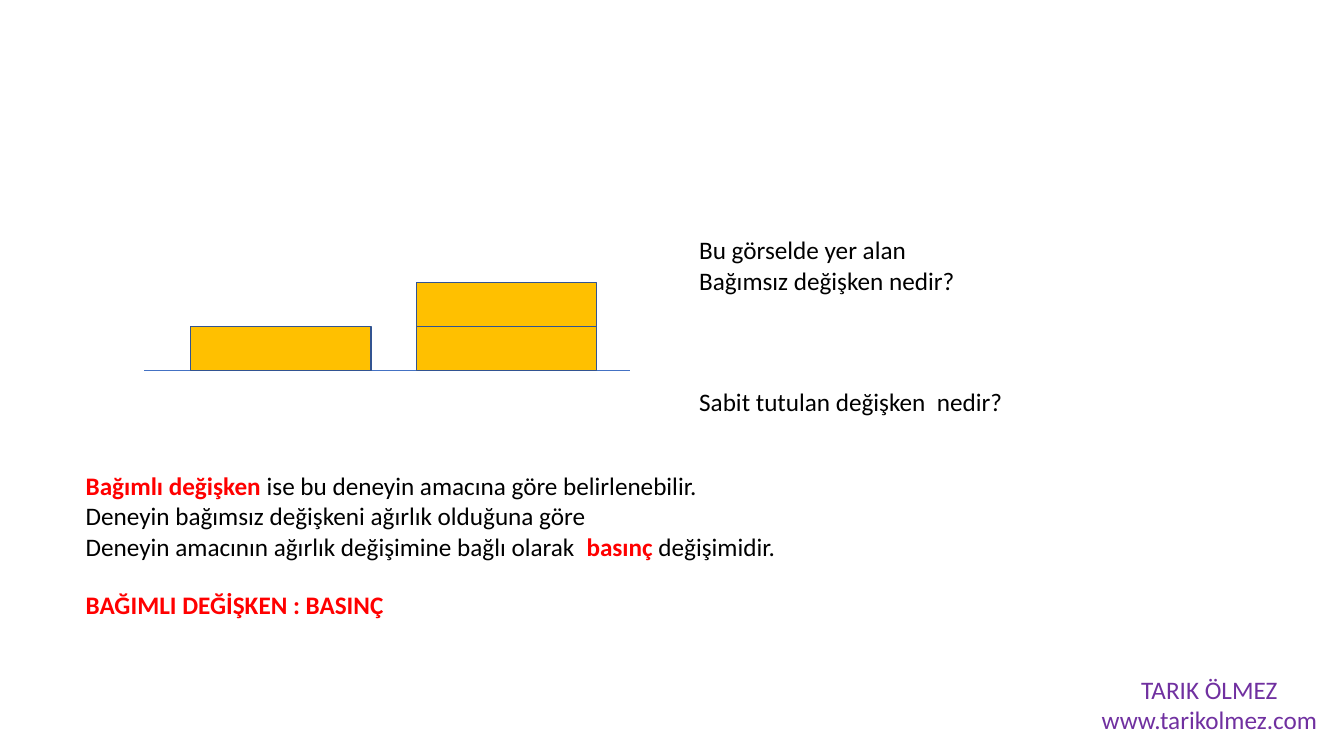
"""Builds a slide on the variables of a pressure experiment."""
from lxml.etree import SubElement
from pptx import Presentation
from pptx.dml.color import RGBColor
from pptx.enum.shapes import MSO_CONNECTOR as Connector, MSO_SHAPE as Shape
from pptx.enum.text import PP_ALIGN as Align
from pptx.oxml.ns import qn
from pptx.util import Cm, Pt

BLACK = RGBColor(0x00, 0x00, 0x00)
RED = RGBColor(0xFF, 0x00, 0x00)
PURPLE = RGBColor(0x70, 0x30, 0xA0)
AMBER = RGBColor(0xFF, 0xC0, 0x00)
BLUE = RGBColor(0x44, 0x72, 0xC4)
DARK_BLUE = RGBColor(0x32, 0x54, 0x91)

PLAIN = {"name": "Calibri", "size": Pt(18), "bold": False}
STRONG = PLAIN | {"bold": True}


def add_text(slide, box, paragraphs, align=Align.LEFT):
    """Adds a text box; each paragraph is a list of (text, format, colour)."""
    frame = slide.shapes.add_textbox(*map(Cm, box)).text_frame
    frame.word_wrap = True
    for index, runs in enumerate(paragraphs):
        paragraph = frame.add_paragraph() if index else frame.paragraphs[0]
        paragraph.alignment = align
        for text, values, colour in runs:
            run = paragraph.add_run()
            run.text = text
            run.font.color.rgb = colour
            for name, value in values.items():
                setattr(run.font, name, value)
    return frame


presentation = Presentation()
presentation.slide_width = Cm(33.87)
presentation.slide_height = Cm(19.05)
slide = presentation.slides.add_slide(presentation.slide_layouts[6])

questions = add_text(slide, (17.37, 5.79, 13.69, 4.88), [
    [("Bu görselde yer alan", PLAIN, BLACK)],
    [("Bağımsız değişken nedir?", PLAIN, BLACK)],
    [("Sabit tutulan değişken  nedir?", PLAIN, BLACK)],
])
questions.paragraphs[-1].space_before = Pt(65)

add_text(slide, (1.91, 11.73, 20.52, 2.57), [
    [("Bağımlı değişken ", STRONG, RED),
     ("ise bu deneyin amacına göre belirlenebilir.", PLAIN, BLACK)],
    [("Deneyin bağımsız değişkeni ağırlık olduğuna göre", PLAIN, BLACK)],
    [("Deneyin amacının ağırlık değişimine bağlı olarak  ", PLAIN, BLACK),
     ("basınç", STRONG, RED),
     (" değişimidir.", PLAIN, BLACK)],
])

GROUND = 9.34
BRICK_WIDTH, BRICK_HEIGHT = 4.55, 1.11
ground = slide.shapes.add_connector(
    Connector.STRAIGHT, Cm(3.63), Cm(GROUND), Cm(15.88), Cm(GROUND))
ground.line.color.rgb = BLUE
ground.line.width = Pt(0.5)
SubElement(ground._element.spPr, qn("a:effectLst"))

for left, count in ((4.8, 1), (10.49, 2)):
    for level in range(1, count + 1):
        brick = slide.shapes.add_shape(
            Shape.RECTANGLE, Cm(left), Cm(GROUND - level * BRICK_HEIGHT),
            Cm(BRICK_WIDTH), Cm(BRICK_HEIGHT))
        brick.shadow.inherit = False
        brick.fill.solid()
        brick.fill.fore_color.rgb = AMBER
        brick.line.color.rgb = DARK_BLUE
        brick.line.width = Pt(1)

add_text(slide, (1.91, 14.73, 19.48, 1.02),
         [[("BAĞIMLI DEĞİŞKEN : BASINÇ", STRONG, RED)]])
add_text(slide, (26.11, 16.87, 8.74, 1.8),
         [[("TARIK ÖLMEZ", PLAIN, PURPLE)],
          [("www.tarikolmez.com", PLAIN, PURPLE)]], Align.CENTER)

presentation.save("out.pptx")
